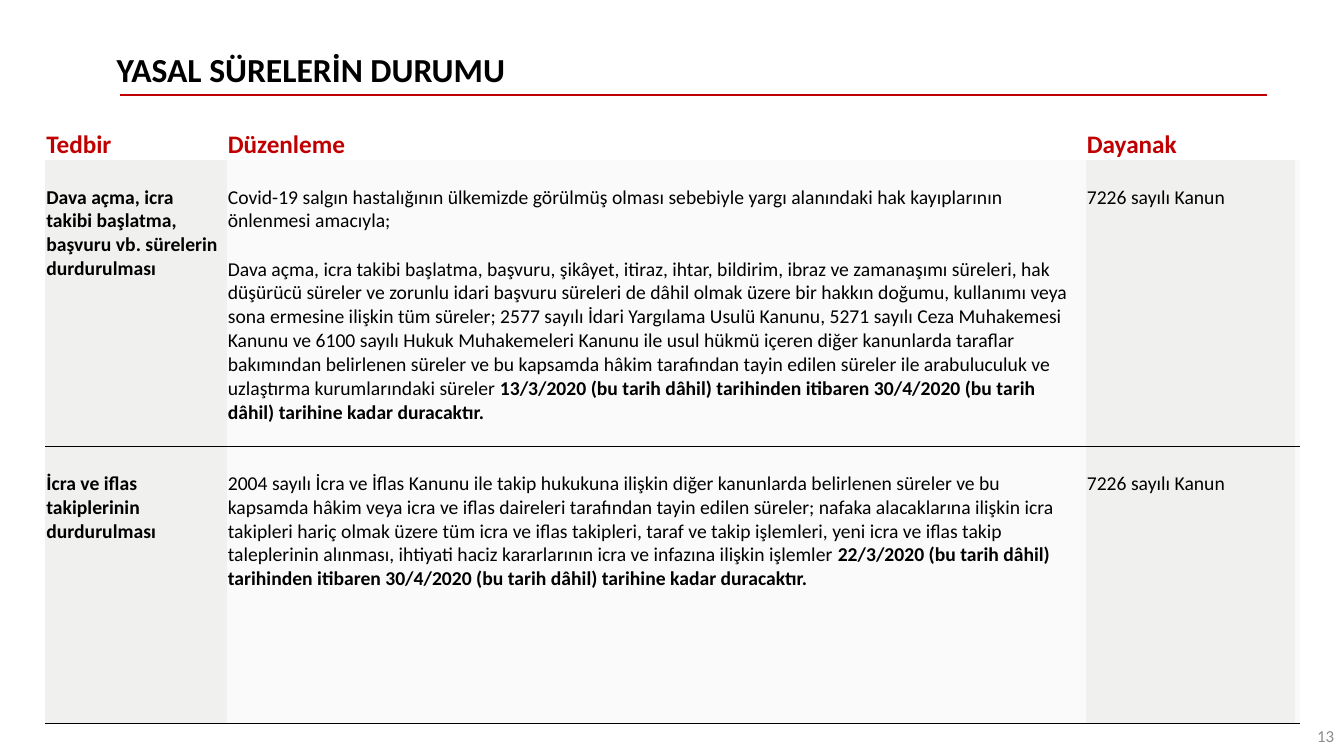
from lxml import etree
from pptx import Presentation
from pptx import util as u
from pptx.dml.color import RGBColor
from pptx.enum import shapes, text
from pptx.oxml.ns import qn

RED = RGBColor(0xC0, 0x00, 0x00)
BLACK = RGBColor(0x00, 0x00, 0x00)
GRAY = RGBColor(0x8C, 0x8C, 0x8C)
COLUMN_DARK = RGBColor(0xF0, 0xF0, 0xEF)
COLUMN_LIGHT = RGBColor(0xFA, 0xFA, 0xFA)
COLUMN_FILLS = [COLUMN_DARK, COLUMN_LIGHT, COLUMN_DARK, COLUMN_LIGHT]

FONT = "Calibri"
NO_STYLE_NO_GRID = "{2D5ABB26-0587-4C30-8999-92F81FD0307C}"
BODY_LINE = u.Inches(0.24)

COLUMN_WIDTHS = [1.8, 8.52, 2.07, 0.05]
ROW_HEIGHTS = [0.31, 2.84, 2.75]
HEADINGS = ["Tedbir", "Düzenleme", "Dayanak", ""]

# Each measure: name, paragraphs of the regulation, its bold closing, legal basis
MEASURES = [
    (
        "Dava açma, icra takibi başlatma, başvuru vb. sürelerin durdurulması",
        [
            "Covid-19 salgın hastalığının ülkemizde görülmüş olması sebebiyle yargı "
            "alanındaki hak kayıplarının önlenmesi amacıyla;",
            "Dava açma, icra takibi başlatma, başvuru, şikâyet, itiraz, ihtar, bildirim, "
            "ibraz ve zamanaşımı süreleri, hak düşürücü süreler ve zorunlu idari başvuru "
            "süreleri de dâhil olmak üzere bir hakkın doğumu, kullanımı veya sona ermesine "
            "ilişkin tüm süreler; 2577 sayılı İdari Yargılama Usulü Kanunu, 5271 sayılı "
            "Ceza Muhakemesi Kanunu ve 6100 sayılı Hukuk Muhakemeleri Kanunu ile usul hükmü "
            "içeren diğer kanunlarda taraflar bakımından belirlenen süreler ve bu kapsamda "
            "hâkim tarafından tayin edilen süreler ile arabuluculuk ve uzlaştırma "
            "kurumlarındaki süreler ",
        ],
        "13/3/2020 (bu tarih dâhil) tarihinden itibaren 30/4/2020 (bu tarih dâhil) "
        "tarihine kadar duracaktır.",
        "7226 sayılı Kanun",
    ),
    (
        "İcra ve iflas takiplerinin durdurulması",
        [
            "2004 sayılı İcra ve İflas Kanunu ile takip hukukuna ilişkin diğer kanunlarda "
            "belirlenen süreler ve bu kapsamda hâkim veya icra ve iflas daireleri "
            "tarafından tayin edilen süreler; nafaka alacaklarına ilişkin icra takipleri "
            "hariç olmak üzere tüm icra ve iflas takipleri, taraf ve takip işlemleri, yeni "
            "icra ve iflas takip taleplerinin alınması, ihtiyati haciz kararlarının icra "
            "ve infazına ilişkin işlemler ",
        ],
        "22/3/2020 (bu tarih dâhil) tarihinden itibaren 30/4/2020 (bu tarih dâhil) "
        "tarihine kadar duracaktır.",
        "7226 sayılı Kanun",
    ),
]


def set_font(font, size, color, bold=False):
    font.name = FONT
    font.size = u.Pt(size)
    font.color.rgb = color
    font.bold = bold


def add_label(slide, box, wording, size, color, bold=False):
    shape = slide.shapes.add_textbox(*[u.Inches(length) for length in box])
    shape.text_frame.word_wrap = True
    paragraph = shape.text_frame.paragraphs[0]
    paragraph.text = wording
    set_font(paragraph.font, size, color, bold)
    return shape


def add_title_rule(slide):
    rule = slide.shapes.add_connector(
        shapes.MSO_CONNECTOR.STRAIGHT,
        u.Inches(1.19), u.Inches(0.94), u.Inches(12.57), u.Inches(0.94),
    )
    rule.line.color.rgb = RED
    rule.line.width = u.Pt(1.5)
    etree.SubElement(rule.element.spPr, qn("a:effectLst"))


def add_bottom_border(cell):
    border = etree.SubElement(
        cell._tc.get_or_add_tcPr(), qn("a:lnB"), w=str(u.Pt(0.5))
    )
    fill = etree.SubElement(border, qn("a:solidFill"))
    etree.SubElement(fill, qn("a:srgbClr"), val=str(BLACK))


def set_margins(cell, top, right=0.01):
    cell.margin_left = u.Inches(0.01)
    cell.margin_right = u.Inches(right)
    cell.margin_top = top
    cell.margin_bottom = 0


def fill_heading(cell, wording):
    set_margins(cell, u.Inches(0.01))
    cell.vertical_anchor = text.MSO_ANCHOR.BOTTOM
    cell.text = wording
    set_font(cell.text_frame.paragraphs[0].font, 18, RED, True)
    cell.fill.background()


def fill_body(cell, paragraphs, color, bold=False, closing="", right=0.01):
    """Write paragraphs one line apart, ending with an optional bold closing."""
    set_margins(cell, BODY_LINE + u.Inches(0.01), right)
    cell.text = "\n".join(paragraphs)
    for index, paragraph in enumerate(cell.text_frame.paragraphs):
        set_font(paragraph.font, 14, BLACK, bold)
        if index:
            paragraph.space_before = BODY_LINE
    if closing:
        run = cell.text_frame.paragraphs[-1].add_run()
        run.text = closing
        set_font(run.font, 14, BLACK, True)
    add_bottom_border(cell)
    cell.fill.solid()
    cell.fill.fore_color.rgb = color


def add_measures_table(slide):
    frame = slide.shapes.add_table(
        len(ROW_HEIGHTS), len(COLUMN_WIDTHS),
        u.Inches(0.45), u.Inches(1.28),
        u.Inches(sum(COLUMN_WIDTHS)), u.Inches(sum(ROW_HEIGHTS)),
    )
    table = frame.table
    table.first_row = table.horz_banding = False
    for style in frame.element.iter(qn("a:tableStyleId")):
        style.text = NO_STYLE_NO_GRID
    for column, width in zip(table.columns, COLUMN_WIDTHS):
        column.width = u.Inches(width)
    for row, height in zip(table.rows, ROW_HEIGHTS):
        row.height = u.Inches(height)

    for column, heading in enumerate(HEADINGS):
        fill_heading(table.cell(0, column), heading)
    for row, (name, regulation, closing, basis) in enumerate(MEASURES, start=1):
        cells = [table.cell(row, column) for column in range(len(COLUMN_WIDTHS))]
        fill_body(cells[0], [name], COLUMN_FILLS[0], bold=True, right=0.09)
        fill_body(cells[1], regulation, COLUMN_FILLS[1], closing=closing)
        fill_body(cells[2], [basis], COLUMN_FILLS[2])
        fill_body(cells[3], [], COLUMN_FILLS[3])


def add_page_number(slide):
    shape = add_label(slide, (10.33, 7.1, 3, 0.4), "13", 12, GRAY)
    shape.text_frame.vertical_anchor = text.MSO_ANCHOR.MIDDLE
    shape.text_frame.paragraphs[0].alignment = text.PP_ALIGN.RIGHT


def main():
    presentation = Presentation()
    presentation.slide_width = u.Inches(13.33)
    presentation.slide_height = u.Inches(7.5)
    slide = presentation.slides.add_slide(presentation.slide_layouts[6])
    add_label(slide, (1.06, 0.44, 12.66, 0.5), "YASAL SÜRELERİN DURUMU", 24, BLACK, True)
    add_title_rule(slide)
    add_measures_table(slide)
    add_page_number(slide)
    presentation.save("out.pptx")


if __name__ == "__main__":
    main()
